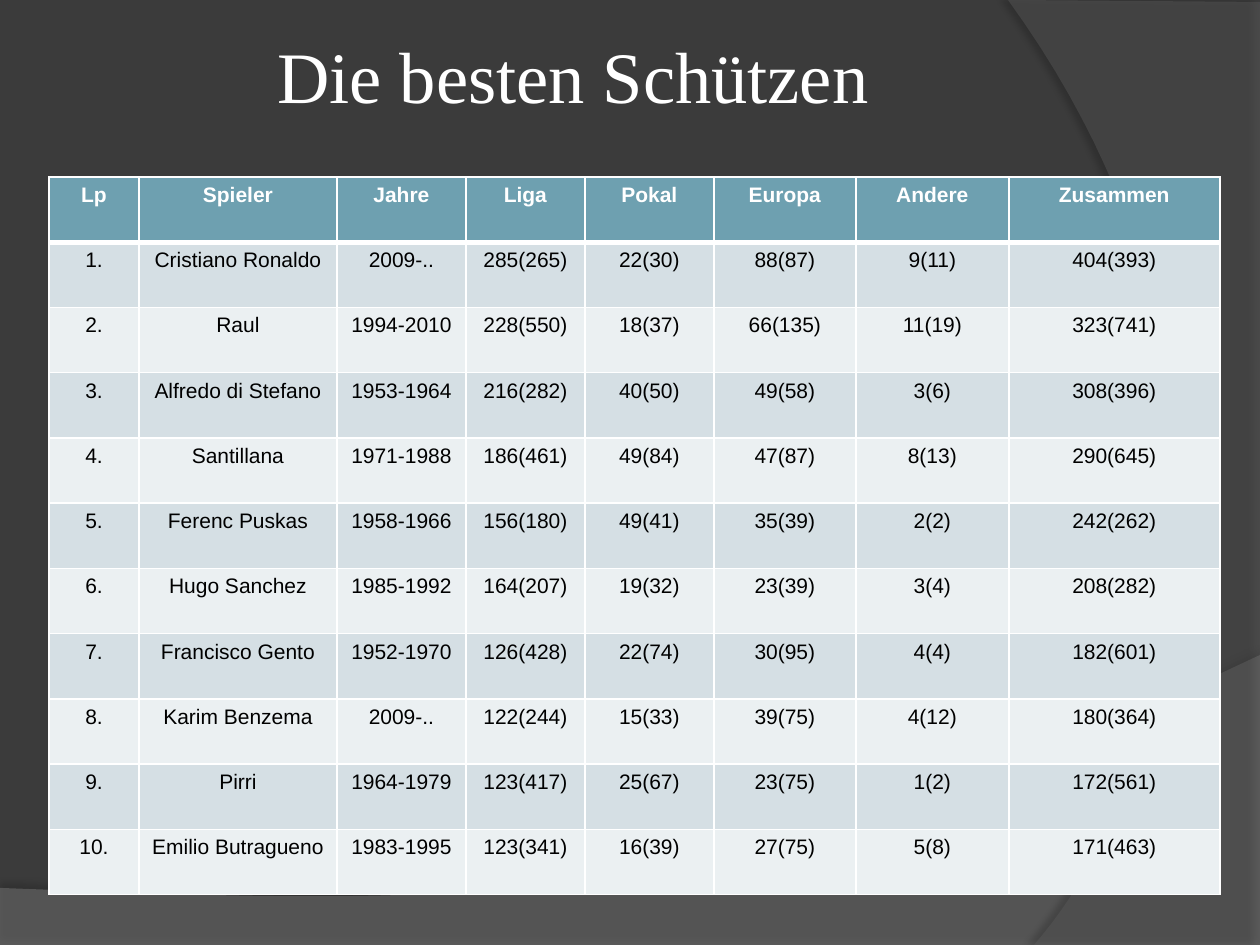
from lxml.etree import SubElement
from pptx import Presentation
from pptx.dml.color import RGBColor
from pptx.enum.text import MSO_ANCHOR as Anchor, PP_ALIGN as Align
from pptx.oxml import parse_xml
from pptx.oxml.ns import nsdecls, qn
from pptx.util import Pt

EMU_PER_PX = 914400 / 126
COLORS = {
    "background": "3B3B3B", "wave": "7F7F7F", "arc": "5E5E5E",
    "shadow": "000000", "light": "FFFFFF", "dark": "000000",
    "header": "6EA0B0", "odd": "D5DFE4", "even": "EBF0F2",
}
TITLE_FORMAT = {"name": "Times New Roman", "size": Pt(41.4), "bold": False}
HEADER_FORMAT = {"name": "Arial", "size": Pt(12), "bold": True}
BODY_FORMAT = {**HEADER_FORMAT, "bold": False}

COLUMN_WIDTHS = [90, 198, 129, 119, 129, 142, 153, 211]
HEADERS = ["Lp", "Spieler", "Jahre", "Liga", "Pokal", "Europa", "Andere", "Zusammen"]
SCORERS = [
    ("Cristiano Ronaldo", "2009-..", "285(265)", "22(30)", "88(87)", "9(11)", "404(393)"),
    ("Raul", "1994-2010", "228(550)", "18(37)", "66(135)", "11(19)", "323(741)"),
    ("Alfredo di Stefano", "1953-1964", "216(282)", "40(50)", "49(58)", "3(6)", "308(396)"),
    ("Santillana", "1971-1988", "186(461)", "49(84)", "47(87)", "8(13)", "290(645)"),
    ("Ferenc Puskas", "1958-1966", "156(180)", "49(41)", "35(39)", "2(2)", "242(262)"),
    ("Hugo Sanchez", "1985-1992", "164(207)", "19(32)", "23(39)", "3(4)", "208(282)"),
    ("Francisco Gento", "1952-1970", "126(428)", "22(74)", "30(95)", "4(4)", "182(601)"),
    ("Karim Benzema", "2009-..", "122(244)", "15(33)", "39(75)", "4(12)", "180(364)"),
    ("Pirri", "1964-1979", "123(417)", "25(67)", "23(75)", "1(2)", "172(561)"),
    ("Emilio Butragueno", "1983-1995", "123(341)", "16(39)", "27(75)", "5(8)", "171(463)"),
]


def px(length):
    return round(length * EMU_PER_PX)


def paint(fill, color):
    fill.solid()
    fill.fore_color.rgb = RGBColor.from_string(COLORS[color])


def write(text_frame, text, color, font_format):
    paragraph = text_frame.paragraphs[0]
    paragraph.alignment = Align.CENTER
    run = paragraph.add_run()
    run.text = text
    for name, value in font_format.items():
        setattr(run.font, name, value)
    run.font.color.rgb = RGBColor.from_string(COLORS[color])


def curve(start, control_1, control_2, end, steps=48):
    """Points along a cubic Bezier curve."""
    points = []
    for step in range(steps + 1):
        t = step / steps
        weights = ((1 - t) ** 3, 3 * t * (1 - t) ** 2, 3 * t * t * (1 - t), t ** 3)
        corners = (start, control_1, control_2, end)
        points.append(tuple(sum(w * corner[axis] for w, corner in zip(weights, corners))
                            for axis in (0, 1)))
    return points


def add_backdrop(slide, box, points, color, opacity, shadow):
    left, top = box
    outline = [(px(x), px(y)) for x, y in points]
    builder = slide.shapes.build_freeform(*outline[0])
    builder.add_line_segments(outline[1:], close=True)
    shape = builder.convert_to_shape(px(left), px(top))
    paint(shape.fill, color)
    shape.line.fill.background()

    # Transparency and soft outer shadow
    fill_color = shape._element.spPr.find(".//" + qn("a:srgbClr"))
    SubElement(fill_color, qn("a:alpha"), val=str(opacity * 1000))
    shape._element.spPr.append(parse_xml(
        f'<a:effectLst {nsdecls("a")}><a:outerShdw blurRad="{Pt(4)}" '
        f'dist="{Pt(shadow["distance"])}" dir="{shadow["angle"] * 60000}" '
        f'algn="ctr" rotWithShape="0"><a:srgbClr val="{COLORS["shadow"]}">'
        f'<a:alpha val="{shadow["opacity"] * 1000}"/></a:srgbClr>'
        '</a:outerShdw></a:effectLst>'))


def add_title(slide, box, text):
    text_frame = slide.shapes.add_textbox(*map(px, box)).text_frame
    text_frame.word_wrap = True
    text_frame.vertical_anchor = Anchor.MIDDLE
    for side in ("left", "top", "right", "bottom"):
        setattr(text_frame, f"margin_{side}", px(6))
    write(text_frame, text, "light", TITLE_FORMAT)


def set_borders(cell, widths):
    properties = cell._tc.get_or_add_tcPr()
    for index, (side, width) in enumerate(widths.items()):
        properties.insert(index, parse_xml(
            f'<a:ln{side} {nsdecls("a")} w="{Pt(width)}"><a:solidFill>'
            f'<a:srgbClr val="{COLORS["light"]}"/></a:solidFill></a:ln{side}>'))


def add_scorer_table(slide, box):
    rows = [HEADERS] + [(f"{rank}.", *scorer) for rank, scorer in enumerate(SCORERS, 1)]
    table = slide.shapes.add_table(len(rows), len(HEADERS), *map(px, box)).table
    for column, width in zip(table.columns, COLUMN_WIDTHS):
        column.width = px(width)
    for row_index, row in enumerate(rows):
        is_header = row_index == 0
        fill = "header" if is_header else "odd" if row_index % 2 else "even"
        for column_index, text in enumerate(row):
            cell = table.cell(row_index, column_index)
            cell.margin_left = cell.margin_right = px(9)
            paint(cell.fill, fill)
            # The header is set off by a thick rule
            set_borders(cell, {"L": 1, "R": 1, "T": 3 if row_index == 1 else 1,
                               "B": 3 if is_header else 1})
            write(cell.text_frame, text, "light" if is_header else "dark",
                  HEADER_FORMAT if is_header else BODY_FORMAT)


def main():
    presentation = Presentation()
    presentation.slide_width, presentation.slide_height = px(1260), px(945)
    slide = presentation.slides.add_slide(presentation.slide_layouts[6])
    paint(slide.background.fill, "background")

    # Wave along the bottom, then arc on the right
    wave = [(0, 291), *curve((1260, 0), (704, 264), (493, 251), (0, 233))]
    wave.insert(1, (1260, 291))
    add_backdrop(slide, (0, 655), wave, "wave", 45,
                 {"distance": 3.5, "angle": 270, "opacity": 35})
    arc = [(252, 2), (252, 945), *curve((26, 945), (170, 780), (275, 378), (0, 0))]
    add_backdrop(slide, (1008, 0), arc, "arc", 40,
                 {"distance": 4, "angle": 180, "opacity": 45})

    add_title(slide, (88, 29, 970, 91), "Die besten Schützen")
    add_scorer_table(slide, (49, 177, sum(COLUMN_WIDTHS), 718))
    presentation.save("out.pptx")


if __name__ == "__main__":
    main()
